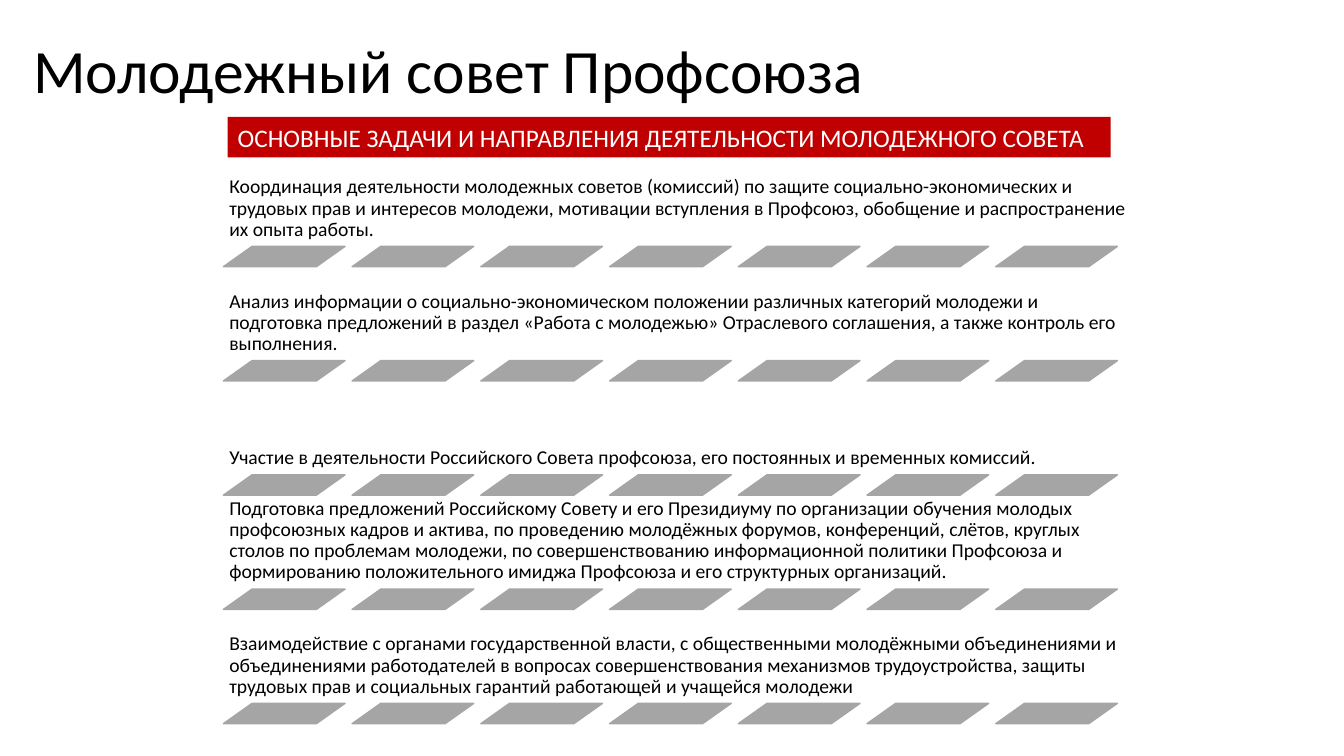
from pptx import Presentation
from pptx import util as u
from pptx.dml import color
from pptx.enum import shapes, text

FONT = "Calibri"
TASKS = [
    "Координация деятельности молодежных советов (комиссий) по защите социально-экономических и трудовых прав "
    "и интересов молодежи, мотивации вступления в Профсоюз, обобщение и распространение их опыта работы.",
    "Анализ информации о социально-экономическом положении различных категорий молодежи и подготовка предложений "
    "в раздел «Работа с молодежью» Отраслевого соглашения, а также контроль его выполнения.",
    "Участие в деятельности Российского Совета профсоюза, его постоянных и временных комиссий.",
    "Подготовка предложений Российскому Совету и его Президиуму по организации обучения молодых профсоюзных "
    "кадров и актива, по проведению молодёжных форумов, конференций, слётов, круглых столов по проблемам "
    "молодежи, по совершенствованию информационной политики Профсоюза и формированию положительного имиджа "
    "Профсоюза и его структурных организаций.",
    "Взаимодействие с органами государственной власти, с общественными молодёжными объединениями и "
    "объединениями работодателей в вопросах совершенствования механизмов трудоустройства, защиты трудовых прав "
    "и социальных гарантий работающей и учащейся молодежи",
]
TASK_LEFT, TASK_TOP, TASK_PITCH = 159.6, 116.7, 81.6
TASK_WIDTH, TASK_HEIGHT = 651.6, 59.3
DASH_COUNT, DASH_STEP = 7, 91.95
DASH_WIDTH, DASH_HEIGHT = 86.9, 14.5


def paint(target, hex_color):
    if hasattr(target, "solid"):
        target.solid()
        target.fore_color.rgb = color.RGBColor.from_string(hex_color)
    else:
        target.rgb = color.RGBColor.from_string(hex_color)


def write(frame, wording, size, hex_color, anchor, spacing=1.0):
    frame.text = wording
    frame.word_wrap = True
    frame.auto_size = text.MSO_AUTO_SIZE.NONE
    frame.vertical_anchor = anchor
    paragraph = frame.paragraphs[0]
    paragraph.alignment = text.PP_ALIGN.LEFT
    paragraph.line_spacing = spacing
    font = paragraph.runs[0].font
    font.name, font.size = FONT, u.Pt(size)
    paint(font.color, hex_color)


def add_title(slide, wording):
    title = slide.shapes.title
    title.left, title.top = u.Pt(16.6), u.Pt(0)
    title.width, title.height = u.Pt(828), u.Pt(104.4)
    write(title.text_frame, wording, 44, "000000", text.MSO_ANCHOR.MIDDLE, 0.9)


def add_block(slide, preset, left, top, width, height, hex_color):
    block = slide.shapes.add_shape(preset, u.Pt(left), u.Pt(top), u.Pt(width), u.Pt(height))
    block.shadow.inherit = False
    paint(block.fill, hex_color)
    block.line.fill.background()
    return block


def add_heading(slide, wording):
    heading = add_block(slide, shapes.MSO_SHAPE.RECTANGLE, 162.7, 83.5, 630.7, 29, "C00000")
    write(heading.text_frame, wording, 18, "FFFFFF", text.MSO_ANCHOR.TOP)


def add_task(slide, wording, top):
    task = slide.shapes.add_textbox(u.Pt(TASK_LEFT), u.Pt(top), u.Pt(TASK_WIDTH), u.Pt(TASK_HEIGHT))
    frame = task.text_frame
    frame.margin_left = frame.margin_right = frame.margin_top = frame.margin_bottom = u.Pt(4.2)
    write(frame, wording, 14, "000000", text.MSO_ANCHOR.BOTTOM, 0.9)


def add_dashes(slide, top):
    for column in range(DASH_COUNT):
        dash = add_block(slide, shapes.MSO_SHAPE.PARALLELOGRAM, TASK_LEFT + column * DASH_STEP, top,
                         DASH_WIDTH, DASH_HEIGHT, "A5A5A5")
        dash.adjustments[0] = 1.41
        paint(dash.line.fill, "A5A5A5")
        dash.line.width = u.Pt(1)


def main():
    deck = Presentation()
    deck.slide_width, deck.slide_height = u.Pt(960), u.Pt(540)
    slide = deck.slides.add_slide(deck.slide_layouts.get_by_name("Title Only"))
    add_title(slide, "Молодежный совет Профсоюза")
    for row, wording in enumerate(TASKS):
        top = TASK_TOP + row * TASK_PITCH
        add_task(slide, wording, top)
        add_dashes(slide, top + TASK_HEIGHT)
    add_heading(slide, "ОСНОВНЫЕ ЗАДАЧИ И НАПРАВЛЕНИЯ ДЕЯТЕЛЬНОСТИ МОЛОДЕЖНОГО СОВЕТА")
    deck.save("out.pptx")


if __name__ == "__main__":
    main()
